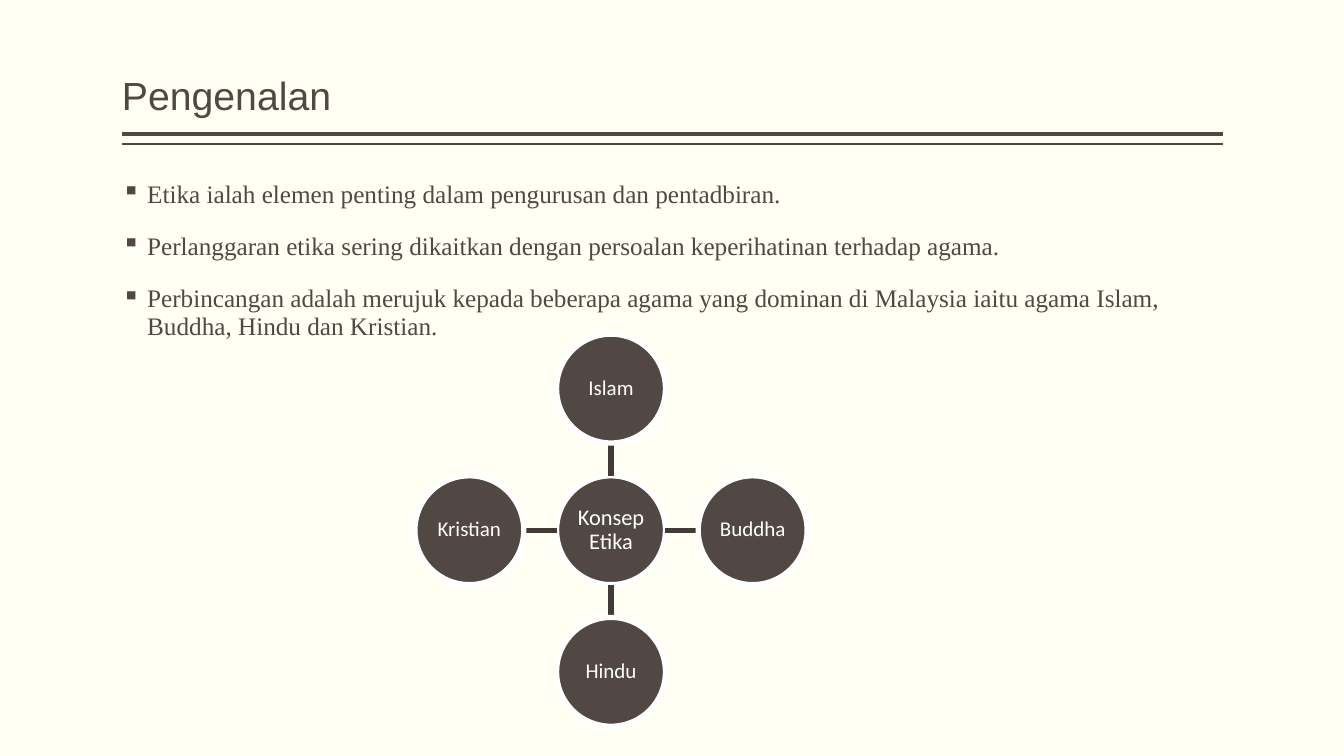
from dataclasses import dataclass

from lxml.etree import SubElement
from pptx import Presentation
from pptx.dml.color import RGBColor
from pptx.enum.shapes import MSO_CONNECTOR, MSO_SHAPE
from pptx.enum.text import MSO_ANCHOR, MSO_AUTO_SIZE, PP_ALIGN
from pptx.oxml.ns import qn
from pptx.slide import Slide
from pptx.text.text import TextFrame
from pptx.util import Inches, Pt


@dataclass(frozen=True)
class Theme:
    paper: RGBColor = RGBColor(0xFF, 0xFF, 0xF3)
    brown: RGBColor = RGBColor(0x51, 0x48, 0x43)
    spoke: RGBColor = RGBColor(0x41, 0x3A, 0x36)
    white: RGBColor = RGBColor(0xFF, 0xFF, 0xFF)
    title_font: str = "Arial"
    body_font: str = "Times New Roman"
    node_font: str = "Calibri"
    title_size: int = 28
    body_size: int = 18
    hub_size: int = 16
    node_size: int = 15
    spoke_width: float = 3.78


@dataclass(frozen=True)
class Node:
    """A circle, placed in grid steps from the hub."""
    label: str
    col: int
    row: int


THEME = Theme()

# Page measures, in inches
WIDTH, HEIGHT = 13.33, 7.5
LEFT, CONTENT_WIDTH = 1.21, 10.92
RULES = ((1.33, 3), (1.43, 1))

# Diagram grid, in inches
HUB_X, HUB_Y = 6.06, 5.26
STEP, DIAMETER = 1.405, 1.08

BULLETS = (
    "Etika ialah elemen penting dalam pengurusan dan pentadbiran.",
    "Perlanggaran etika sering dikaitkan dengan persoalan keperihatinan terhadap agama.",
    "Perbincangan adalah merujuk kepada beberapa agama yang dominan di Malaysia "
    "iaitu agama Islam, Buddha, Hindu dan Kristian.",
)
HUB = Node("Konsep Etika", 0, 0)
RELIGIONS = (
    Node("Islam", 0, -1),
    Node("Buddha", 1, 0),
    Node("Hindu", 0, 1),
    Node("Kristian", -1, 0),
)


def set_frame(tf: TextFrame, anchor: MSO_ANCHOR, side: float, top: float) -> None:
    tf.word_wrap = True
    tf.auto_size = MSO_AUTO_SIZE.NONE
    tf.vertical_anchor = anchor
    tf.margin_left = tf.margin_right = Inches(side)
    tf.margin_top = tf.margin_bottom = Inches(top)


def add_paragraph(tf: TextFrame, text: str, font: str, size: int,
                  color: RGBColor, align: PP_ALIGN, first: bool = True):
    p = tf.paragraphs[0] if first else tf.add_paragraph()
    p.text = text
    p.alignment = align
    p.line_spacing = 0.9
    p.font.name, p.font.size = font, Pt(size)
    p.font.color.rgb = color
    return p


def add_line(s: Slide, x1: float, y1: float, x2: float, y2: float,
             color: RGBColor, width: float) -> None:
    line = s.shapes.add_connector(
        MSO_CONNECTOR.STRAIGHT, Inches(x1), Inches(y1), Inches(x2), Inches(y2))
    line.line.color.rgb = color
    line.line.width = Pt(width)
    SubElement(line._element.spPr, qn("a:effectLst"))


def add_title(s: Slide, text: str) -> None:
    sp = s.shapes.title
    sp.left, sp.top = Inches(LEFT), Inches(0.03)
    sp.width, sp.height = Inches(CONTENT_WIDTH), Inches(1.2)
    set_frame(sp.text_frame, MSO_ANCHOR.BOTTOM, 0, 0.05)
    add_paragraph(sp.text_frame, text, THEME.title_font, THEME.title_size,
                  THEME.brown, PP_ALIGN.LEFT)


def add_bullets(s: Slide, items: tuple[str, ...]) -> None:
    sp = s.shapes.add_textbox(
        Inches(LEFT), Inches(1.75), Inches(CONTENT_WIDTH), Inches(5))
    tf = sp.text_frame
    set_frame(tf, MSO_ANCHOR.TOP, 0, 0.05)
    for i, item in enumerate(items):
        p = add_paragraph(tf, item, THEME.body_font, THEME.body_size,
                          THEME.brown, PP_ALIGN.LEFT, first=i == 0)
        p.space_before = Pt(18)
        pPr = p._p.get_or_add_pPr()
        pPr.set("marL", str(Inches(0.25)))
        pPr.set("indent", str(Inches(-0.25)))
        bullet = pPr.makeelement(qn("a:buChar"), {"char": "▪"})
        pPr.insert_element_before(bullet, "a:tabLst", "a:defRPr", "a:extLst")


def add_node(s: Slide, node: Node, size: int) -> None:
    x = HUB_X + node.col * STEP - DIAMETER / 2
    y = HUB_Y + node.row * STEP - DIAMETER / 2
    sp = s.shapes.add_shape(MSO_SHAPE.OVAL, Inches(x), Inches(y),
                            Inches(DIAMETER), Inches(DIAMETER))
    sp.shadow.inherit = False
    sp.fill.solid()
    sp.fill.fore_color.rgb = THEME.brown
    sp.line.color.rgb = THEME.white
    sp.line.width = Pt(THEME.spoke_width)
    set_frame(sp.text_frame, MSO_ANCHOR.MIDDLE, 0.01, 0.01)
    add_paragraph(sp.text_frame, node.label, THEME.node_font, size,
                  THEME.white, PP_ALIGN.CENTER)


def add_spoke(s: Slide, node: Node) -> None:
    """Join the rim of the hub to the rim of a node."""
    near, far = DIAMETER / 2, STEP - DIAMETER / 2
    add_line(s, HUB_X + node.col * near, HUB_Y + node.row * near,
             HUB_X + node.col * far, HUB_Y + node.row * far,
             THEME.spoke, THEME.spoke_width)


def main() -> None:
    prs = Presentation()
    prs.slide_width, prs.slide_height = Inches(WIDTH), Inches(HEIGHT)
    s = prs.slides.add_slide(prs.slide_layouts[5])
    s.background.fill.solid()
    s.background.fill.fore_color.rgb = THEME.paper

    # Title with its double rule
    for y, width in RULES:
        add_line(s, LEFT, y, LEFT + CONTENT_WIDTH, y, THEME.brown, width)
    add_title(s, "Pengenalan")

    # Body text
    add_bullets(s, BULLETS)

    # Hub and spokes
    add_node(s, HUB, THEME.hub_size)
    for node in RELIGIONS:
        add_spoke(s, node)
        add_node(s, node, THEME.node_size)

    prs.save("out.pptx")


if __name__ == "__main__":
    main()
